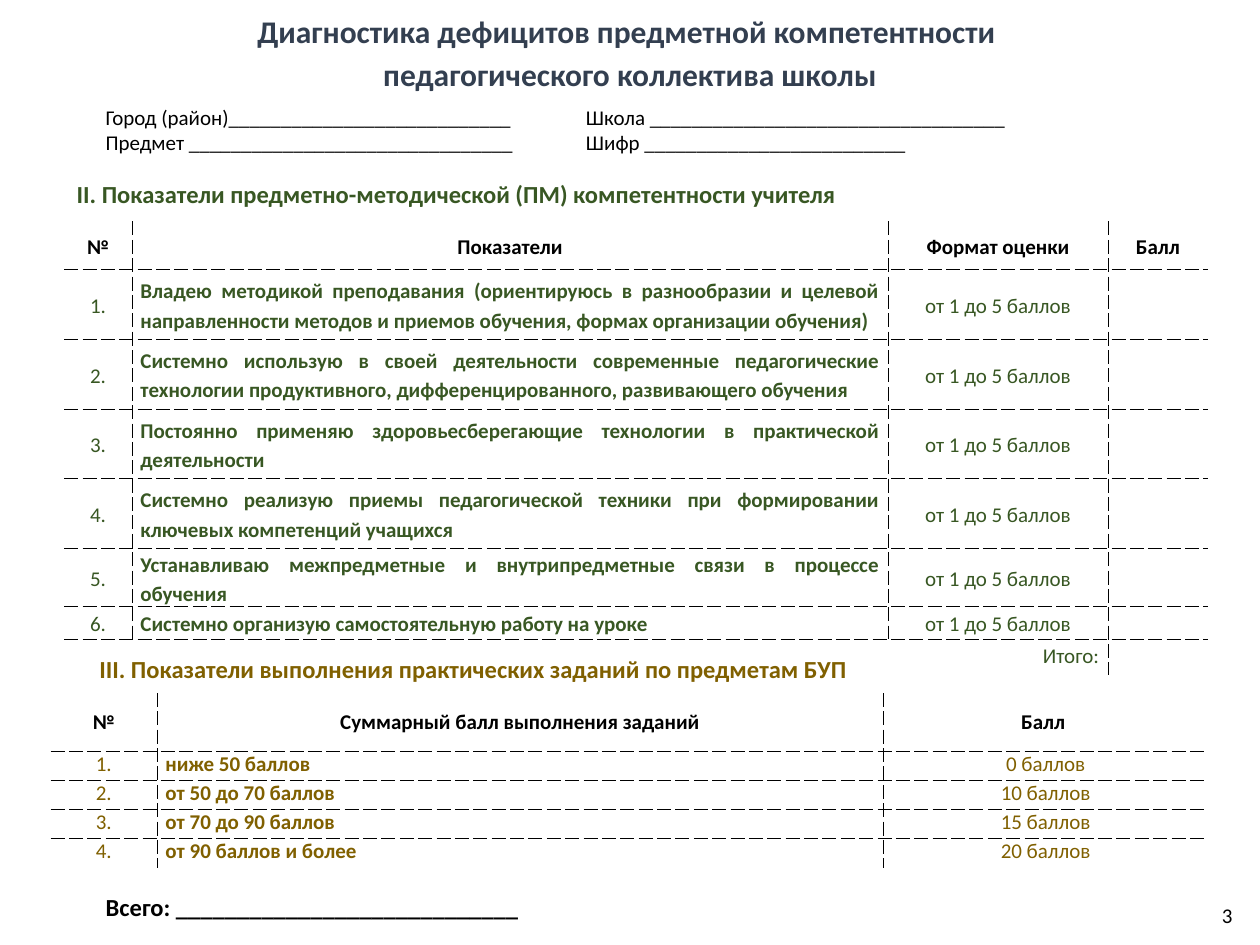
import pptx
import pptx.dml.color
import pptx.enum.text
import pptx.util
from lxml import etree
from pptx.oxml.ns import qn

Pt = pptx.util.Pt
ALIGN = pptx.enum.text.PP_ALIGN
ANCHOR = pptx.enum.text.MSO_ANCHOR
COLORS = {"title": "333F50", "text": "000000", "method": "385723", "practice": "806000"}


def write(tf, lines, size, color, bold=False, align=ALIGN.LEFT, spacing=1.0):
    tf.text = "\n".join(lines)
    for p in tf.paragraphs:
        p.alignment = align
        p.line_spacing = spacing
        p.font.name = "Calibri"
        p.font.size = Pt(size)
        p.font.bold = bold
        p.font.color.rgb = pptx.dml.color.RGBColor.from_string(COLORS[color])


def add_grid(left, top, widths, heights, rows, aligns, color, spacing, body_anchor):
    """Add a table with dashed lines between its cells and none around it."""
    shape = s.shapes.add_table(len(heights), len(widths), Pt(left), Pt(top),
                               Pt(sum(widths)), Pt(sum(heights)))
    table = shape.table
    table.first_row = table.horz_banding = False
    for column, width in zip(table.columns, widths):
        column.width = Pt(width)
    for row, height in zip(table.rows, heights):
        row.height = Pt(height)
    for i, row in enumerate(rows):
        for j, text in enumerate(row):
            cell = table.cell(i, j)
            cell.margin_left = cell.margin_right = Pt(5)
            cell.margin_top = cell.margin_bottom = 0
            cell.vertical_anchor = ANCHOR.MIDDLE if i == 0 else body_anchor
            cell.fill.background()
            write(cell.text_frame, [text], 12, color if i else "text", i == 0 or j == 1,
                  aligns[j] if i else ALIGN.CENTER, spacing)
            inner = {"lnL": j > 0, "lnR": j < len(widths) - 1,
                     "lnT": i > 0, "lnB": i < len(heights) - 1}
            for k, (side, visible) in enumerate(inner.items()):
                ln = etree.Element(qn("a:" + side), w=str(Pt(0.25)))
                if visible:
                    fill = etree.SubElement(ln, qn("a:solidFill"))
                    etree.SubElement(fill, qn("a:srgbClr"), val=COLORS["text"])
                    etree.SubElement(ln, qn("a:prstDash"), val="sysDash")
                else:
                    etree.SubElement(ln, qn("a:noFill"))
                cell._tc.get_or_add_tcPr().insert(k, ln)
    return table


prs = pptx.Presentation()
prs.slide_width, prs.slide_height = Pt(720), Pt(540)
s = prs.slides.add_slide(prs.slide_layouts[5])

title = s.shapes.title
title.left, title.top, title.width, title.height = 0, 0, Pt(720), Pt(56)
title.text_frame.vertical_anchor = ANCHOR.TOP
write(title.text_frame,
      ["Диагностика дефицитов предметной компетентности ", "педагогического коллектива школы"],
      18, "title", True, ALIGN.CENTER, 1.15)

form_lines = ["Город (район)" + "_" * 27 + "\tШкола " + "_" * 34,
              "Предмет " + "_" * 31 + "\tШифр " + "_" * 25]
texts = [
    (53.3, 56.2, 659, 36, form_lines, 12, "text", False),
    (36.7, 98.6, 605, 24.5,
     ["II. Показатели предметно-методической (ПМ) компетентности учителя"], 14, "method", True),
    (49.7, 370, 605, 24.5,
     ["III. Показатели выполнения практических заданий по предметам БУП"], 14, "practice", True),
    (53.3, 506.2, 256, 24.5, ["Всего: " + "_" * 28], 14, "text", True),
    (691.2, 512, 20, 23, ["3"], 12, "text", False),
]
for left, top, width, height, lines, size, color, bold in texts:
    tf = s.shapes.add_textbox(Pt(left), Pt(top), Pt(width), Pt(height)).text_frame
    tf.word_wrap = True
    write(tf, lines, size, color, bold)
    if lines is form_lines:
        for p in tf.paragraphs:
            tabs = etree.Element(qn("a:tabLst"))
            etree.SubElement(tabs, qn("a:tab"), pos=str(Pt(274.5)), algn="l")
            p._p.pPr.find(qn("a:defRPr")).addprevious(tabs)

skills = [
    "Владею методикой преподавания (ориентируюсь в разнообразии и целевой "
    "направленности методов и приемов обучения, формах организации обучения)",
    "Системно использую в своей деятельности современные педагогические "
    "технологии продуктивного, дифференцированного, развивающего обучения",
    "Постоянно применяю здоровьесберегающие технологии в практической деятельности",
    "Системно реализую приемы педагогической техники при формировании "
    "ключевых компетенций учащихся",
    "Устанавливаю межпредметные и внутрипредметные связи в процессе обучения",
    "Системно организую самостоятельную работу на уроке",
]
rows = [("№", "Показатели", "Формат оценки", "Балл")]
rows += [(f"{n}.", skill, "от 1 до 5 баллов", "") for n, skill in enumerate(skills, 1)]
rows.append(("", "", "", ""))
method = add_grid(36.7, 126.5, [38.6, 432.4, 125.3, 57.4],
                  [27.5] + [39.85] * 4 + [33.2, 18.8, 20.5], rows,
                  [ALIGN.CENTER, ALIGN.JUSTIFY, ALIGN.CENTER, ALIGN.CENTER],
                  "method", 1.15, ANCHOR.MIDDLE)
total = method.cell(7, 0)
total.merge(method.cell(7, 2))
total.vertical_anchor = ANCHOR.TOP
write(total.text_frame, ["Итого:"], 12, "method", False, ALIGN.RIGHT, 1.15)

scores = [("ниже 50 баллов", 0), ("от 50 до 70 баллов", 10),
          ("от 70 до 90 баллов", 15), ("от 90 баллов и более", 20)]
rows = [("№", "Суммарный балл выполнения заданий", "Балл ")]
rows += [(f"{n}.", label, f"{score} баллов") for n, (label, score) in enumerate(scores, 1)]
add_grid(29, 396, [60.6, 415.2, 185.5], [33.4] + [16.6] * 4, rows,
         [ALIGN.CENTER, ALIGN.LEFT, ALIGN.CENTER], "practice", 1.0, ANCHOR.TOP)

prs.save("out.pptx")
